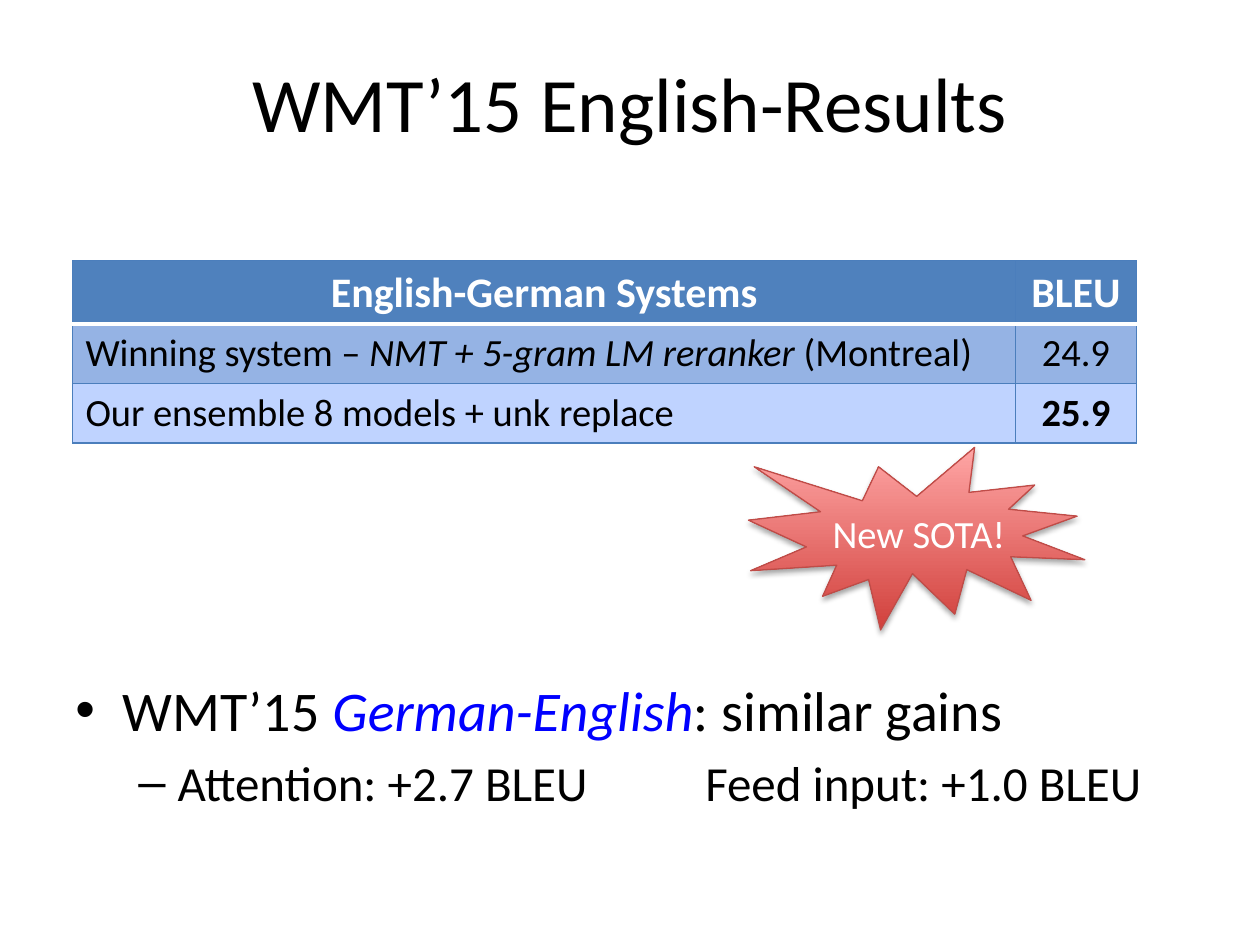
from dataclasses import dataclass, field

from lxml import etree
from pptx import Presentation
from pptx.dml.color import RGBColor
from pptx.enum.shapes import MSO_SHAPE
from pptx.enum.text import MSO_ANCHOR, PP_ALIGN
from pptx.oxml.ns import qn
from pptx.util import Cm, Pt

LEFT, CENTER = PP_ALIGN.LEFT, PP_ALIGN.CENTER
TOP, MIDDLE = MSO_ANCHOR.TOP, MSO_ANCHOR.MIDDLE
BURST = MSO_SHAPE.EXPLOSION1

BLACK, WHITE, BLUE = "000000", "FFFFFF", "0000FF"
HEADER, GRID = "4F81BD", "4B7EBC"
BAND_DARK, BAND_LIGHT = "95B3E4", "BFD3FF"
BURST_DARK, BURST_LIGHT, BURST_EDGE = "D1403C", "FFA6A5", "BF4C48"


@dataclass
class Piece:
    text: str
    color: str = BLACK
    style: dict = field(default_factory=dict)


@dataclass
class Line:
    pieces: list
    size: float
    align: int = LEFT
    level: int = 0
    bullet: str = ""
    margin: float = 0
    hanging: float = 0
    before: float = 0


@dataclass
class Row:
    lines: list
    height: float
    fill: str


@dataclass
class Box:
    left: float
    top: float
    width: float
    height: float

    def lengths(self) -> tuple:
        return tuple(Cm(v) for v in (self.left, self.top, self.width, self.height))


def rgb(value: str) -> RGBColor:
    return RGBColor.from_string(value)


def apply(target, values: dict) -> None:
    for name, value in values.items():
        setattr(target, name, value)


def add_element(parent, tag: str, **attributes):
    return etree.SubElement(parent, qn(tag), {k: str(v) for k, v in attributes.items()})


def write_lines(frame, lines: list) -> None:
    for index, line in enumerate(lines):
        paragraph = frame.paragraphs[0] if index == 0 else frame.add_paragraph()
        apply(paragraph, {"alignment": line.align, "level": line.level,
                          "space_before": Pt(line.before)})
        if line.bullet:
            properties = paragraph._p.get_or_add_pPr()
            properties.set("marL", str(Cm(line.margin)))
            properties.set("indent", str(-Cm(line.hanging)))
            properties.set("defTabSz", str(Cm(1.27)))
            add_element(properties, "a:buFont", typeface="Arial")
            add_element(properties, "a:buChar", char=line.bullet)
        for piece in line.pieces:
            run = paragraph.add_run()
            run.text = piece.text
            apply(run.font, {"name": "Calibri", "size": Pt(line.size), **piece.style})
            run.font.color.rgb = rgb(piece.color)


def add_text(slide, box: Box, lines: list, anchor: int) -> None:
    frame = slide.shapes.add_textbox(*box.lengths()).text_frame
    apply(frame, {"word_wrap": True, "vertical_anchor": anchor})
    write_lines(frame, lines)


def add_border(cell, side: str, color: str, width: float) -> None:
    edge = add_element(cell._tc.get_or_add_tcPr(), f"a:ln{side}", w=Pt(width))
    add_element(add_element(edge, "a:solidFill"), "a:srgbClr", val=color)


def add_results(slide, box: Box, widths: list, rows: list) -> None:
    table = slide.shapes.add_table(len(rows), len(widths), *box.lengths()).table
    for column, width in zip(table.columns, widths):
        column.width = Cm(width)
    for r, row in enumerate(rows):
        table.rows[r].height = Cm(row.height)
        for c, line in enumerate(row.lines):
            cell = table.cell(r, c)
            for side in "LRTB":
                under_header = (r, side) in ((0, "B"), (1, "T"))
                add_border(cell, side, *((WHITE, 2) if under_header else (GRID, 0.75)))
            cell.fill.solid()
            cell.fill.fore_color.rgb = rgb(row.fill)
            cell.vertical_anchor = MIDDLE if r == 0 else TOP
            write_lines(cell.text_frame, [line])


def add_burst(slide, box: Box, line: Line) -> None:
    burst = slide.shapes.add_shape(BURST, *box.lengths())
    burst.fill.gradient()
    burst.fill.gradient_angle = 90
    for stop, color in zip(burst.fill.gradient_stops, (BURST_DARK, BURST_LIGHT)):
        stop.color.rgb = rgb(color)
    burst.line.color.rgb = rgb(BURST_EDGE)
    burst.line.width = Pt(0.75)
    burst.shadow.inherit = False
    effects = burst._element.spPr.find(qn("a:effectLst"))
    shadow = add_element(effects, "a:outerShdw", blurRad=Pt(3.1), dist=Pt(1.8),
                         dir=5400000, rotWithShape=0)
    add_element(add_element(shadow, "a:srgbClr", val=BLACK), "a:alpha", val=35000)
    apply(burst.text_frame, {"word_wrap": True, "vertical_anchor": MIDDLE,
                             "margin_left": 0, "margin_right": 0,
                             "margin_top": 0, "margin_bottom": 0})
    write_lines(burst.text_frame, [line])


def main() -> None:
    deck = Presentation()
    apply(deck, {"slide_width": Cm(25.4), "slide_height": Cm(19.05)})
    slide = deck.slides.add_slide(deck.slide_layouts[6])
    bold, italic = {"bold": True}, {"italic": True}
    plain = {"bold": False}

    title = Line([Piece("WMT’15 English-Results")], 44, CENTER)
    add_text(slide, Box(1.27, 0.46, 22.86, 3.18), [title], MIDDLE)

    gains = [
        Line([Piece("WMT’15 "), Piece("German-English", BLUE, italic),
              Piece(": similar gains")], 32, bullet="•", margin=0.95, hanging=0.95),
        Line([Piece("Attention: +2.7 BLEU\t\tFeed input: +1.0 BLEU")], 28, level=1,
             bullet="–", margin=2.06, hanging=0.79, before=5.6),
    ]
    add_text(slide, Box(1.27, 13.49, 22.86, 3.68), gains, TOP)

    systems = [
        Row([Line([Piece(label, WHITE, bold)], 24, CENTER)
             for label in ("English-German Systems", "BLEU")], 1.27, HEADER),
        Row([Line([Piece("Winning system – ", style=plain),
                   Piece("NMT + 5-gram LM reranker ", style={**plain, **italic}),
                   Piece("(Montreal)", style=plain)], 22),
             Line([Piece("24.9", style=plain)], 22, CENTER)], 1.2, BAND_DARK),
        Row([Line([Piece("Our ensemble 8 models + unk replace", style=plain)], 22),
             Line([Piece("25.9", style=bold)], 22, CENTER)], 1.2, BAND_LIGHT),
    ]
    add_results(slide, Box(1.47, 5.26, 21.44, 3.67), [19, 2.44], systems)

    add_burst(slide, Box(15.09, 9.02, 6.78, 3.68),
              Line([Piece(" New SOTA!", WHITE)], 22, CENTER))
    deck.save("out.pptx")


if __name__ == "__main__":
    main()
